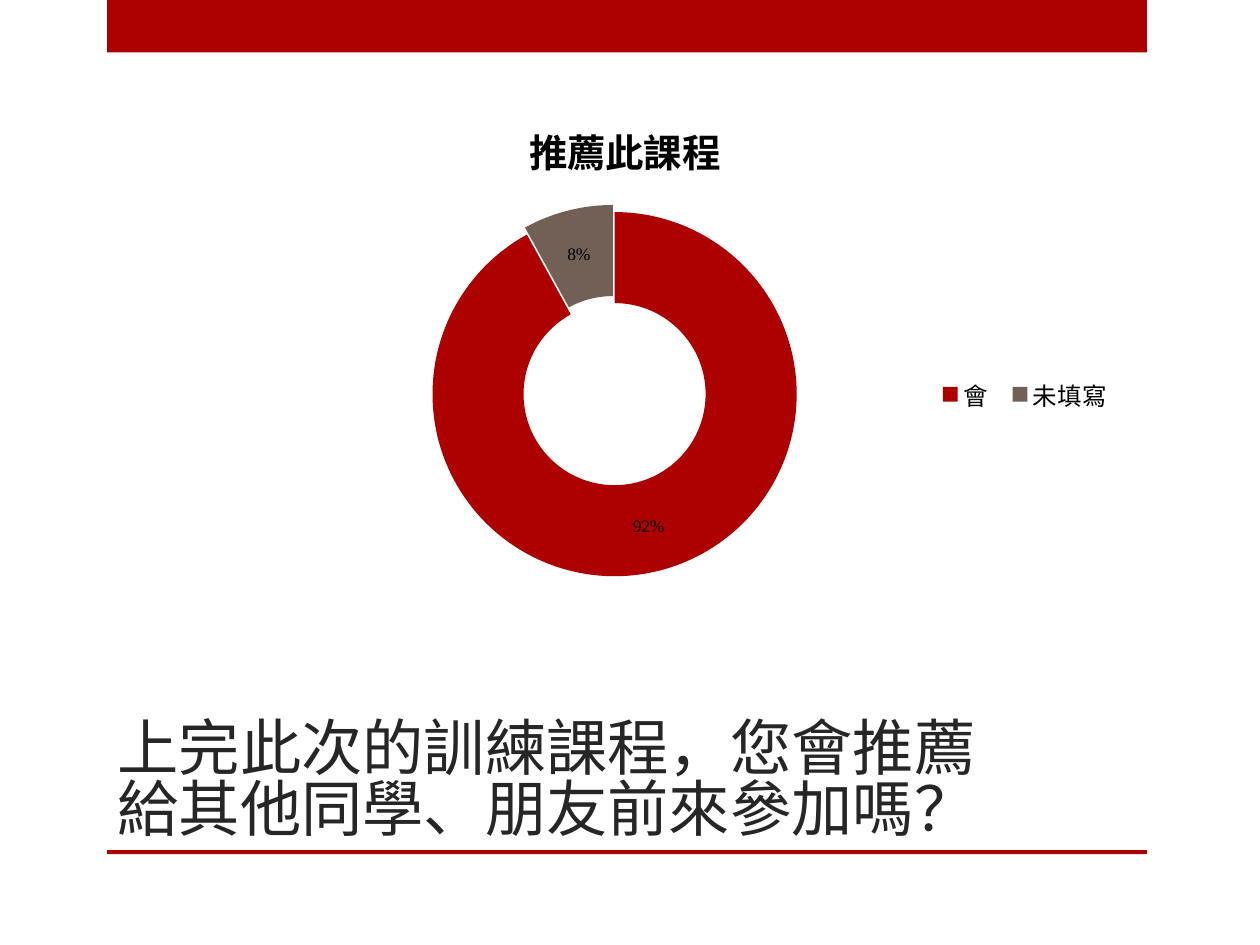
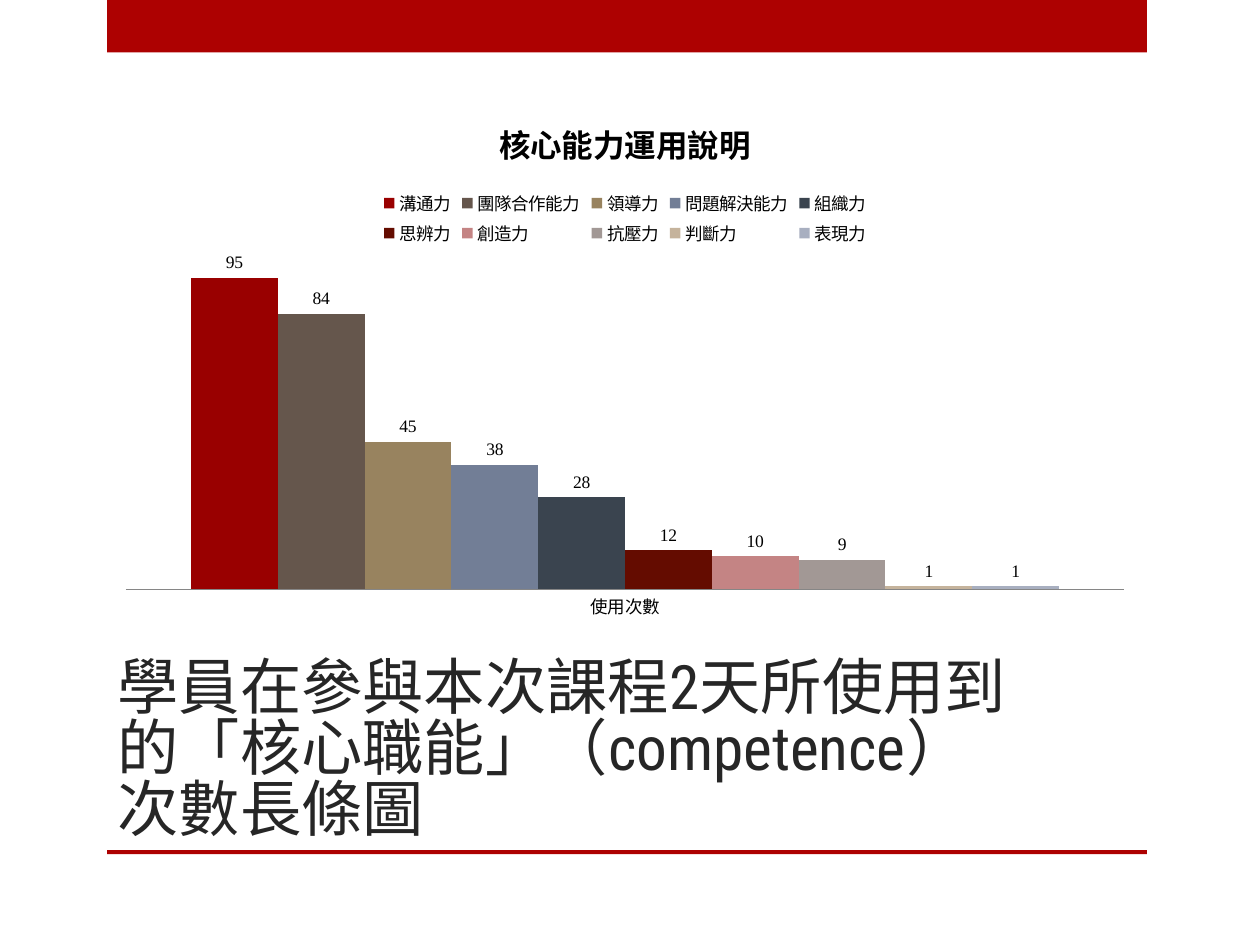
from pptx import Presentation
from pptx.chart.data import CategoryChartData
from pptx.dml.color import RGBColor
from pptx.enum.chart import XL_CHART_TYPE, XL_LABEL_POSITION, XL_LEGEND_POSITION, XL_TICK_MARK
from pptx.enum.shapes import MSO_SHAPE
from pptx.enum.text import MSO_ANCHOR
from pptx.oxml import parse_xml
from pptx.oxml.ns import nsdecls
from pptx.util import Cm, Pt

RED = RGBColor(0xAD, 0x01, 0x01)
BROWN = RGBColor(0x72, 0x60, 0x56)
INK = RGBColor(0x26, 0x26, 0x26)
BLACK = RGBColor(0, 0, 0)
GREY = RGBColor(0x86, 0x86, 0x86)
BARS = [RGBColor.from_string(c) for c in (
    "990000", "65564C", "98835F", "727E96", "3A444F",
    "640C00", "C48484", "A29895", "C5B39C", "A8AFC0")]

TITLE_FONT = "Roboto Condensed"
CHART_FONT = "Times New Roman"

# Boxes: left, top, width, height
BAND = Cm(2.16), Cm(0), Cm(20.96), Cm(1.06)
RULE = Cm(2.16), Cm(17.14), Cm(20.96), Cm(0.08)
TITLE = Cm(2.12), Cm(12.7), Cm(18.84), Cm(4.44)
CHART = Cm(2.12), Cm(1.9), Cm(20.96), Cm(10.8)

SKILLS = {"溝通力": 95, "團隊合作能力": 84, "領導力": 45, "問題解決能力": 38,
          "組織力": 28, "思辨力": 12, "創造力": 10, "抗壓力": 9,
          "判斷力": 1, "表現力": 1}


def paint(part, color):
    part.fill.solid()
    part.fill.fore_color.rgb = color


def add_bar(slide, box):
    bar = slide.shapes.add_shape(MSO_SHAPE.RECTANGLE, *box)
    bar.shadow.inherit = False
    paint(bar, RED)
    bar.line.fill.background()


def add_title(slide, box, text):
    frame = slide.shapes.add_textbox(*box).text_frame
    frame.word_wrap = True
    frame.vertical_anchor = MSO_ANCHOR.BOTTOM
    para = frame.paragraphs[0]
    para.text = text
    para.line_spacing = 0.83
    para.font.name = TITLE_FONT
    para.font.size = Pt(35)
    para.font.color.rgb = INK


def start(prs, text):
    """Add a slide with the shared bands and its title."""
    slide = prs.slides.add_slide(prs.slide_layouts[6])
    add_bar(slide, BAND)
    add_bar(slide, RULE)
    add_title(slide, TITLE, text)
    return slide


def layout(x, y, w, h, inner=False):
    """Manual layout as fractions of the chart box."""
    target = '<c:layoutTarget val="inner"/>' if inner else ""
    return parse_xml(
        f'<c:layout {nsdecls("c")}><c:manualLayout>{target}'
        '<c:xMode val="edge"/><c:yMode val="edge"/>'
        f'<c:x val="{x}"/><c:y val="{y}"/><c:w val="{w}"/><c:h val="{h}"/>'
        '</c:manualLayout></c:layout>')


def clear(node):
    for old in node.xpath("./c:layout"):
        node.remove(old)


def add_chart(slide, box, kind, data, title, size, side):
    chart = slide.shapes.add_chart(kind, *box, data).chart
    chart.font.name = CHART_FONT
    chart.font.size = Pt(10)
    chart.font.color.rgb = BLACK
    # Heading
    chart.has_title = True
    para = chart.chart_title.text_frame.paragraphs[0]
    para.text = title
    para.font.name = CHART_FONT
    para.font.size = Pt(size)
    para.font.bold = True
    para.font.color.rgb = BLACK
    chart.chart_title.include_in_layout = False
    # Legend
    chart.has_legend = True
    chart.legend.position = side
    chart.legend.include_in_layout = False
    # Labels
    chart.plots[0].has_data_labels = True
    return chart


def ring_slide(prs):
    slide = start(prs, "上完此次的訓練課程，您會推薦給其他同學、朋友前來參加嗎？")
    name = "推薦此課程"
    data = CategoryChartData()
    data.categories = ["會", "未填寫"]
    data.add_series(name, [92, 8])
    chart = add_chart(slide, CHART, XL_CHART_TYPE.DOUGHNUT, data, name, 22,
                      XL_LEGEND_POSITION.RIGHT)
    plot = chart.plots[0]
    labels = plot.data_labels
    labels.show_percentage = True
    labels.show_value = False
    labels.number_format = "0%"
    labels.number_format_is_linked = False
    # Slices, the second pulled out
    ring = plot.series[0]
    for i, color in enumerate((RED, BROWN)):
        paint(ring.points[i].format, color)
    look = ring._element.xpath("./c:dPt[2]/c:spPr")[0]
    look.addprevious(parse_xml(f'<c:explosion {nsdecls("c")} val="8"/>'))
    # Places of ring and legend
    area = plot._element.getparent()
    clear(area)
    area.insert(0, layout(0.29, 0.22, 0.4, 0.68, True))
    chart.legend.font.size = Pt(14)
    key = chart.legend._element
    clear(key)
    key.xpath("./c:legendPos")[0].addnext(layout(0.79, 0.51, 0.19, 0.1))


def bar_slide(prs):
    slide = start(prs, "學員在參與本次課程2天所使用到的「核心職能」（competence）次數長條圖")
    data = CategoryChartData()
    data.categories = ["使用次數"]
    for name, count in SKILLS.items():
        data.add_series(name, [count])
    chart = add_chart(slide, CHART, XL_CHART_TYPE.COLUMN_CLUSTERED, data,
                      "核心能力運用說明", 18, XL_LEGEND_POSITION.TOP)
    plot = chart.plots[0]
    plot.gap_width = 150
    plot.vary_by_categories = False
    plot.data_labels.show_value = True
    plot.data_labels.position = XL_LABEL_POSITION.OUTSIDE_END
    for series, color in zip(plot.series, BARS):
        paint(series.format, color)
    # Axes
    chart.value_axis.visible = False
    chart.value_axis.has_major_gridlines = False
    chart.category_axis.major_tick_mark = XL_TICK_MARK.NONE
    chart.category_axis.format.line.color.rgb = GREY


def main():
    prs = Presentation()
    prs.slide_width, prs.slide_height = Cm(25.4), Cm(19.05)
    ring_slide(prs)
    bar_slide(prs)
    prs.save("out.pptx")


if __name__ == "__main__":
    main()
